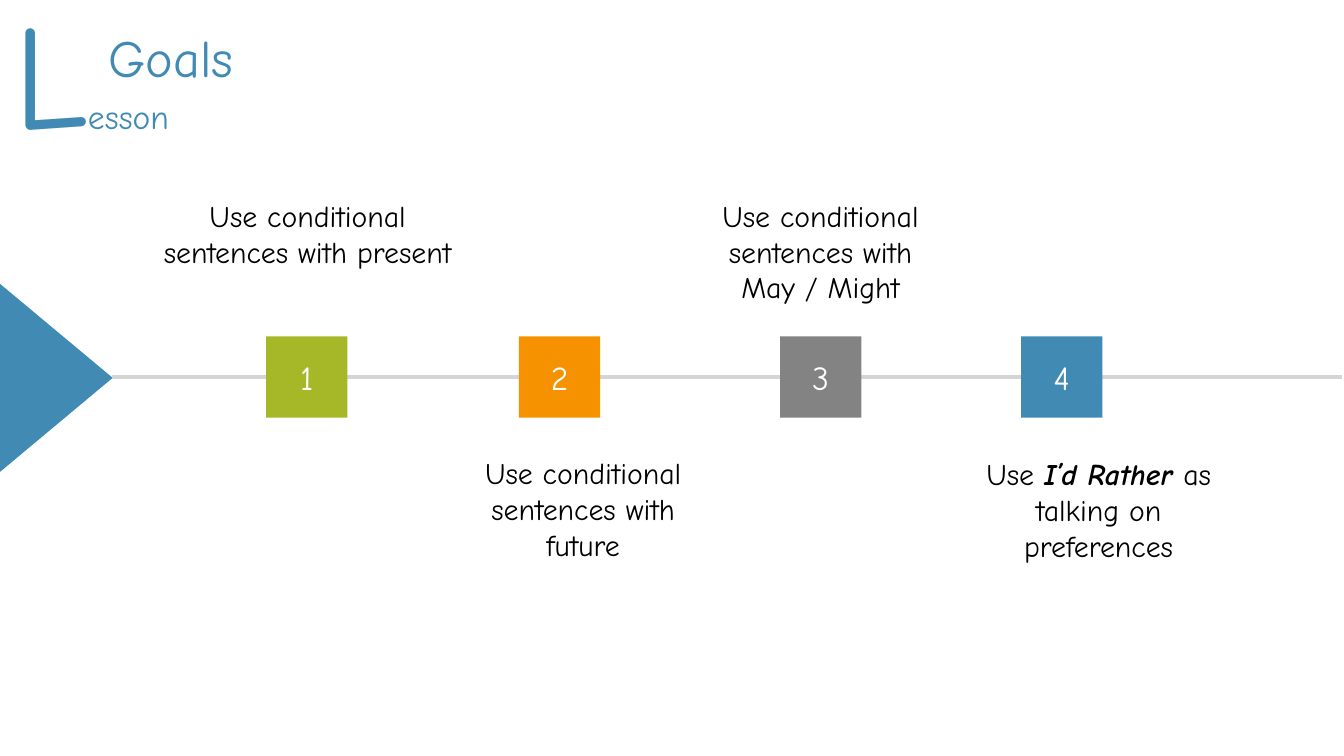
from dataclasses import dataclass

from pptx import Presentation
from pptx.dml.color import RGBColor
from pptx.enum.shapes import MSO_CONNECTOR as Connector, MSO_SHAPE as Shape
from pptx.enum.text import MSO_ANCHOR as Anchor, PP_ALIGN as Align
from pptx.oxml.ns import qn
from pptx.util import Pt
from lxml.etree import SubElement

FONT = "Comic Neue"
BLUE = "418AB3"
AXIS_Y = 202
SQUARE = 43.5


@dataclass
class Span:
    text: str
    size: float | None = None
    emphasis: bool = False


@dataclass
class Goal:
    square_left: float
    color: str
    label: tuple[float, float, float]  # left, top, width
    paragraphs: list[list[Span]]


GOALS = [
    Goal(142.6, "A6B727", (77, 102.2, 175.7),
         [[Span("Use conditional sentences with present")]]),
    Goal(278, "F69200", (246.2, 240, 132.5),
         [[Span("Use conditional sentences with future")]]),
    Goal(417.9, "838383", (344.9, 102.2, 189.4),
         [[Span("Use conditional sentences with")], [Span("May / Might")]]),
    Goal(547.1, BLUE, (515.5, 240.6, 146.2),
         [[Span("Use "), Span("I’d Rather ", emphasis=True),
           Span("as talking on preferences")]]),
]


def rgb(color: str) -> RGBColor:
    return RGBColor.from_string(color)


def write(frame, paragraphs: list[list[Span]], size: float, color: str,
          align=Align.CENTER) -> None:
    frame.word_wrap = True
    for index, spans in enumerate(paragraphs):
        para = frame.add_paragraph() if index else frame.paragraphs[0]
        para.alignment = align
        para.font.name = FONT
        para.font.size = Pt(size)
        para.font.color.rgb = rgb(color)
        for span in spans:
            run = para.add_run()
            run.text = span.text
            if span.size:
                run.font.size = Pt(span.size)
            if span.emphasis:
                run.font.bold = run.font.italic = True


def add_text(page, left: float, top: float, width: float, height: float,
             paragraphs: list[list[Span]], size: float, color: str,
             align=Align.CENTER) -> None:
    box = page.shapes.add_textbox(Pt(left), Pt(top), Pt(width), Pt(height))
    write(box.text_frame, paragraphs, size, color, align)


def add_solid(page, kind, left: float, top: float, width: float,
              height: float, color: str):
    """Add a flat shape without outline or shadow."""
    shape = page.shapes.add_shape(kind, Pt(left), Pt(top), Pt(width), Pt(height))
    shape.shadow.inherit = False
    shape.fill.solid()
    shape.fill.fore_color.rgb = rgb(color)
    shape.line.fill.background()
    return shape


def add_axis(page) -> None:
    arrow = add_solid(page, Shape.ISOSCELES_TRIANGLE, -20.4, 172.2, 101, 60.5, BLUE)
    arrow.rotation = 90
    axis = page.shapes.add_connector(
        Connector.STRAIGHT, Pt(60), Pt(AXIS_Y), Pt(719), Pt(AXIS_Y))
    axis.line.color.rgb = rgb("D5D5D5")
    axis.line.width = Pt(2)
    SubElement(axis._element.spPr, qn("a:effectLst"))


def add_goal(page, number: int, goal: Goal) -> None:
    square = add_solid(page, Shape.RECTANGLE, goal.square_left,
                       AXIS_Y - SQUARE / 2, SQUARE, SQUARE, goal.color)
    square.text_frame.vertical_anchor = Anchor.MIDDLE
    write(square.text_frame, [[Span(str(number))]], 18, "FFFFFF")
    left, top, width = goal.label
    add_text(page, left, top, width, 65.5, goal.paragraphs, 16, "000000")


def main() -> None:
    deck = Presentation()
    deck.slide_width, deck.slide_height = Pt(720), Pt(405)
    page = deck.slides.add_slide(deck.slide_layouts[6])
    add_axis(page)
    add_text(page, 0, -14.4, 170, 104.4, [[Span("L"), Span("esson", size=18)]],
             80, BLUE, Align.JUSTIFY)
    add_text(page, 39.6, 10.1, 103.7, 41, [[Span("Goals")]], 28, BLUE)
    for number, goal in enumerate(GOALS, start=1):
        add_goal(page, number, goal)
    deck.save("out.pptx")


if __name__ == "__main__":
    main()
